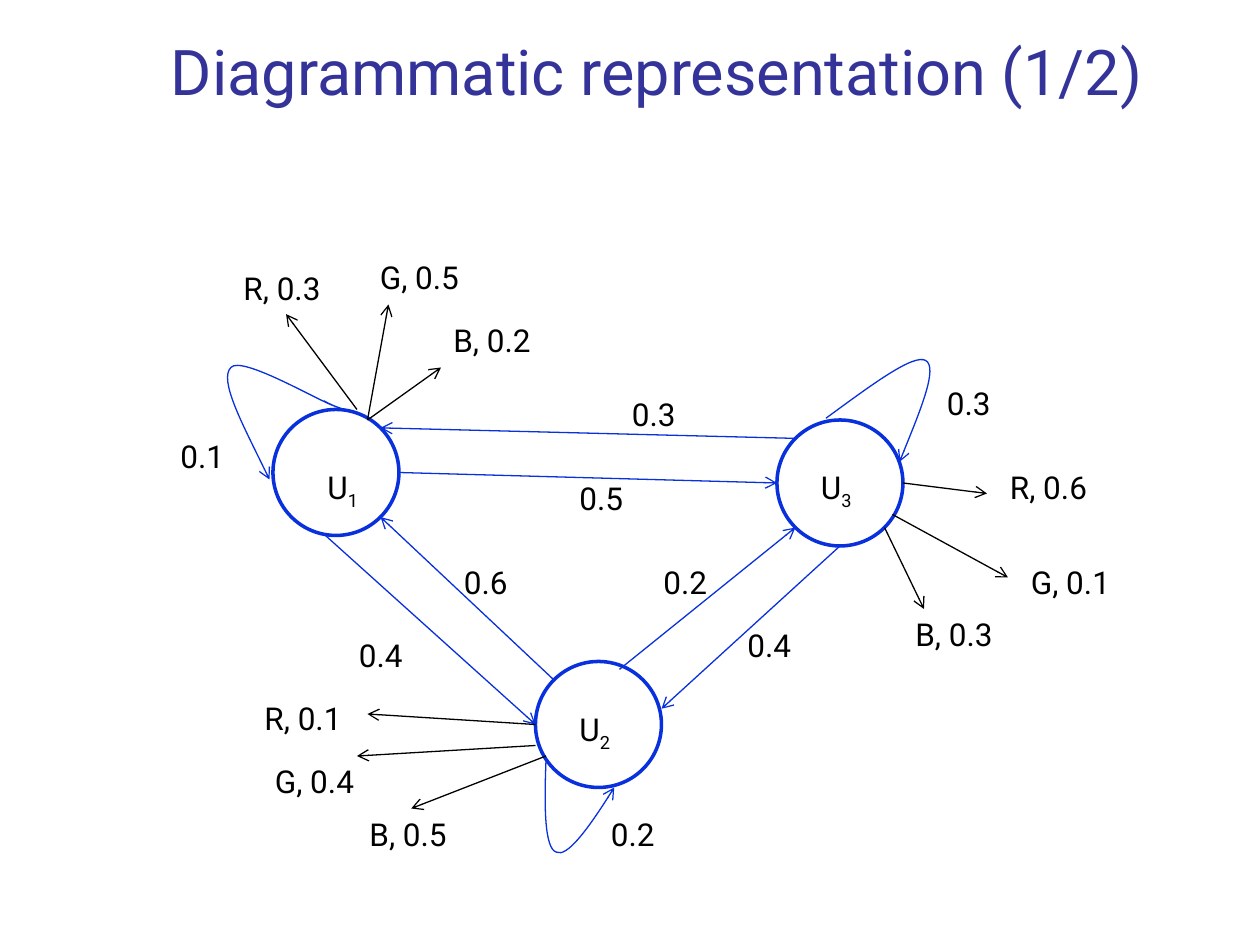
import pptx
import pptx.dml.color
import pptx.enum.shapes
import pptx.enum.text
import pptx.oxml.ns
import pptx.util
import lxml.etree

Pt = pptx.util.Pt
qn = pptx.oxml.ns.qn
COLOURS = {"title": "333399", "transition": "0830DC", "emission": "000000", "label": "000000"}
FONT = "Roboto"
LABEL_HEIGHT = 29
DIAMETER = 72


def write(text, frame, size=18, colour="label", baseline=0):
    span = frame.paragraphs[0].add_run()
    span.text = text
    span.font.name = FONT
    span.font.size = Pt(size)
    span.font.color.rgb = pptx.dml.color.RGBColor.from_string(COLOURS[colour])
    if baseline:
        span.font._element.set("baseline", str(baseline * 1000))


def style_arrow(arrow, colour):
    arrow.line.width = Pt(0.75)
    arrow.line.color.rgb = pptx.dml.color.RGBColor.from_string(COLOURS[colour])
    properties = arrow._element.spPr
    lxml.etree.SubElement(properties.find(qn("a:ln")), qn("a:tailEnd"), type="arrow")
    lxml.etree.SubElement(properties, qn("a:effectLst"))


deck = pptx.Presentation()
deck.slide_width = Pt(720)
deck.slide_height = Pt(540)
page = deck.slides.add_slide(deck.slide_layouts[5])

title = page.shapes.title
title.left, title.top, title.width, title.height = Pt(90.5), Pt(16.5), Pt(613.5), Pt(49)
title.text_frame.auto_size = pptx.enum.text.MSO_AUTO_SIZE.NONE
title.text_frame.vertical_anchor = pptx.enum.text.MSO_ANCHOR.BOTTOM
title.text_frame.paragraphs[0].alignment = pptx.enum.text.PP_ALIGN.LEFT
write("Diagrammatic representation (1/2)", title.text_frame, size=36, colour="title")

for left, top in [(156, 234), (306, 378), (444, 240)]:
    state = page.shapes.add_shape(
        pptx.enum.shapes.MSO_SHAPE.OVAL, Pt(left), Pt(top), Pt(DIAMETER), Pt(DIAMETER))
    state.shadow.inherit = False
    state.fill.background()
    state.line.width = Pt(2)
    state.line.color.rgb = pptx.dml.color.RGBColor.from_string(COLOURS["transition"])

arrows = {
    "transition": [
        (228, 270, 444, 276), (186, 306, 306, 414), (354, 382.5, 454.5, 301.5),
        (316.5, 388.5, 217.5, 295.5), (480, 312, 378, 405), (454.5, 250.5, 217.5, 244.5),
    ],
    "emission": [
        (505.5, 301.5, 528, 348), (510, 294, 576, 330), (516, 276, 564, 282),
        (306, 414, 210, 408), (306, 426, 204, 432), (312, 432, 235, 462),
        (204, 234, 163.5, 179.5), (210, 240, 222, 174), (210, 240, 252, 210),
    ],
}
for colour, lines in arrows.items():
    for ends in lines:
        arrow = page.shapes.add_connector(
            pptx.enum.shapes.MSO_CONNECTOR.STRAIGHT, *[Pt(value) for value in ends])
        style_arrow(arrow, colour)

self_loops = [
    [(185, 229), (192, 233), (200, 235), (191, 232), (182, 229), (138, 203),
     (132, 210), (125, 217), (140, 245), (154, 274)],
    [(472, 239), (498, 220), (522, 202), (529, 206), (536, 210), (525, 237), (514, 264)],
    [(312, 435), (311, 460), (311, 485), (318, 487), (324, 490), (338, 471), (351, 450)],
]
for start, *controls in self_loops:
    builder = page.shapes.build_freeform(*start, scale=Pt(1))
    builder.add_line_segments(controls, close=False)
    loop = builder.convert_to_shape()
    loop.fill.background()
    style_arrow(loop, "transition")
    segments = list(loop._element.iter(qn("a:lnTo")))
    outline = segments[0].getparent()
    for first in range(0, len(segments), 3):
        curve = lxml.etree.SubElement(outline, qn("a:cubicBezTo"))
        for segment in segments[first:first + 3]:
            curve.append(segment[0])
            outline.remove(segment)

labels = [
    ("U", "1", 180, 264, 34.5), ("U", "2", 324, 402, 34.5), ("U", "3", 462, 264, 34.5),
    ("0.1", "", 96, 246, 39.5), ("0.2", "", 372, 318, 39.5), ("0.4", "", 420, 354, 39.5),
    ("0.6", "", 258, 318, 39.5), ("0.4", "", 198, 360, 39.5), ("0.5", "", 324, 270, 39.5),
    ("0.3", "", 354, 222, 39.5), ("0.2", "", 342, 462, 39.5), ("0.3", "", 534, 216, 39.5),
    ("R, 0.6", "", 570, 264, 62.5), ("G, 0.1", "", 582, 318, 63.5), ("B, 0.3", "", 516, 348, 62),
    ("R, 0.1", "", 144, 396, 62.5), ("G, 0.4", "", 150, 432, 63.5), ("B, 0.5", "", 204, 462, 62),
    ("R, 0.3", "", 132, 150, 62.5), ("G, 0.5", "", 210, 144, 63.5), ("B, 0.2", "", 252, 180, 62),
]
for text, subscript, left, top, width in labels:
    box = page.shapes.add_textbox(Pt(left), Pt(top), Pt(width), Pt(LABEL_HEIGHT))
    box.text_frame.word_wrap = False
    box.text_frame.auto_size = pptx.enum.text.MSO_AUTO_SIZE.SHAPE_TO_FIT_TEXT
    write(text, box.text_frame)
    if subscript:
        write(subscript, box.text_frame, baseline=-25)

deck.save("out.pptx")
